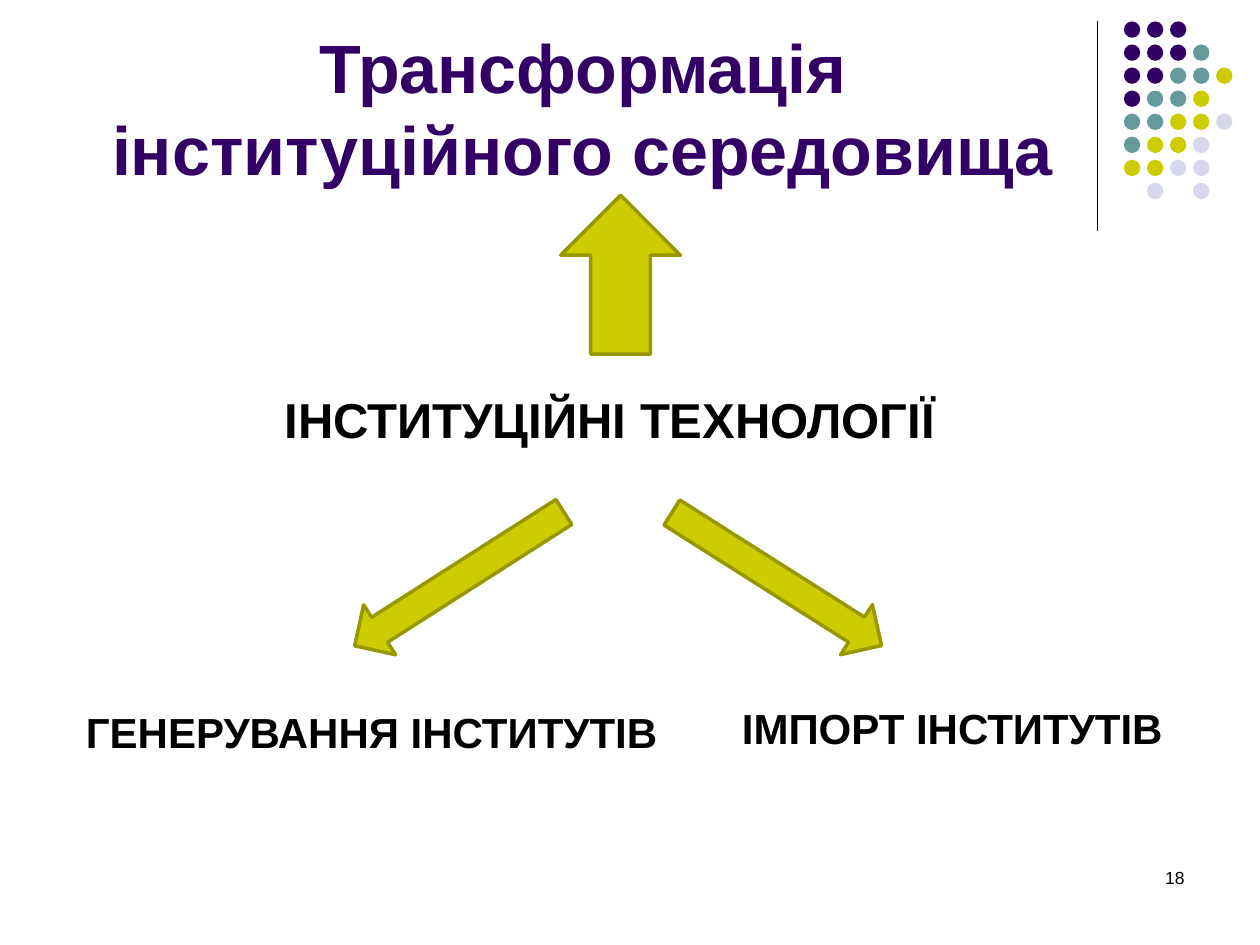
from pptx import Presentation
from pptx.dml.color import RGBColor
from pptx.enum.shapes import MSO_CONNECTOR, MSO_SHAPE
from pptx.enum.text import MSO_ANCHOR, PP_ALIGN
from pptx.oxml.ns import qn
from pptx.util import Inches, Pt
from lxml.etree import SubElement

BLACK = RGBColor(0x00, 0x00, 0x00)
PURPLE = RGBColor(0x33, 0x00, 0x66)
TEAL = RGBColor(0x66, 0x99, 0x99)
LIME = RGBColor(0xCC, 0xCC, 0x00)
OLIVE = RGBColor(0x97, 0x97, 0x00)
PALE = RGBColor(0xD8, 0xD8, 0xEC)

# Content: text, box, format
TEXTS = [
    ("Трансформація інституційного середовища", (0.5, 0.13, 8.25, 1.42),
     dict(size=39, color=PURPLE, bold=True, align=PP_ALIGN.CENTER,
          anchor=MSO_ANCHOR.BOTTOM)),
    ("ІНСТИТУЦІЙНІ ТЕХНОЛОГІЇ", (2.16, 3.04, 5.51, 0.57),
     dict(size=28, bold=True)),
    ("ГЕНЕРУВАННЯ ІНСТИТУТІВ", (0.43, 5.56, 5.04, 0.51),
     dict(size=24, bold=True, align=PP_ALIGN.CENTER)),
    ("ІМПОРТ ІНСТИТУТІВ", (5.79, 5.53, 3.6, 0.5),
     dict(size=24, bold=True)),
    ("18", (7.17, 6.83, 2.33, 0.5), dict(size=10, align=PP_ALIGN.RIGHT)),
]

# Arrows: box, turn in degrees
ARROWS = [
    ((4.45, 1.55, 0.95, 1.26), 180),
    ((3.41, 3.61, 0.47, 1.97), 57.4),
    ((5.93, 3.61, 0.47, 1.97), 302.4),
]

# Corner dots, one letter each
DOTS = ["PPP", "PPPT", "PPTTL", "PTTL", "TTLLA", "TLLA", "LLAA", " A A"]
TINTS = {"P": PURPLE, "T": TEAL, "L": LIME, "A": PALE}
LEFT, TOP, STEP, DOT = 8.92, 0.17, 0.183, 0.13

deck = Presentation()
deck.slide_width, deck.slide_height = Inches(10), Inches(7.5)
slide = deck.slides.add_slide(deck.slide_layouts[6])
shapes = slide.shapes


def add_text(text, box, size=24, color=BLACK, bold=False,
             align=PP_ALIGN.LEFT, anchor=MSO_ANCHOR.TOP):
    frame = shapes.add_textbox(*map(Inches, box)).text_frame
    frame.word_wrap = True
    frame.vertical_anchor = anchor
    para = frame.paragraphs[0]
    para.alignment = align
    run = para.add_run()
    run.text = text
    font = run.font
    font.name, font.size, font.bold = "Arial", Pt(size), bold
    font.color.rgb = color


def add_form(kind, box, fill, edge=None):
    form = shapes.add_shape(kind, *map(Inches, box))
    form.shadow.inherit = False
    form.fill.solid()
    form.fill.fore_color.rgb = fill
    if edge is None:
        form.line.fill.background()
    else:
        form.line.color.rgb = edge
        form.line.width = Pt(2)
    return form


# Divider
rule = shapes.add_connector(MSO_CONNECTOR.STRAIGHT, Inches(8.71), Inches(0.17),
                            Inches(8.71), Inches(1.83))
rule.line.color.rgb = BLACK
rule.line.width = Pt(0.75)
SubElement(rule._element.spPr, qn("a:effectLst"))

# Dot grid
for row, marks in enumerate(DOTS):
    for col, mark in enumerate(marks):
        if mark in TINTS:
            box = (LEFT + col * STEP, TOP + row * STEP, DOT, DOT)
            add_form(MSO_SHAPE.OVAL, box, TINTS[mark])

# Arrows
for box, turn in ARROWS:
    add_form(MSO_SHAPE.DOWN_ARROW, box, LIME, OLIVE).rotation = turn

# Title, labels and page number
for text, box, style in TEXTS:
    add_text(text, box, **style)

deck.save("out.pptx")
